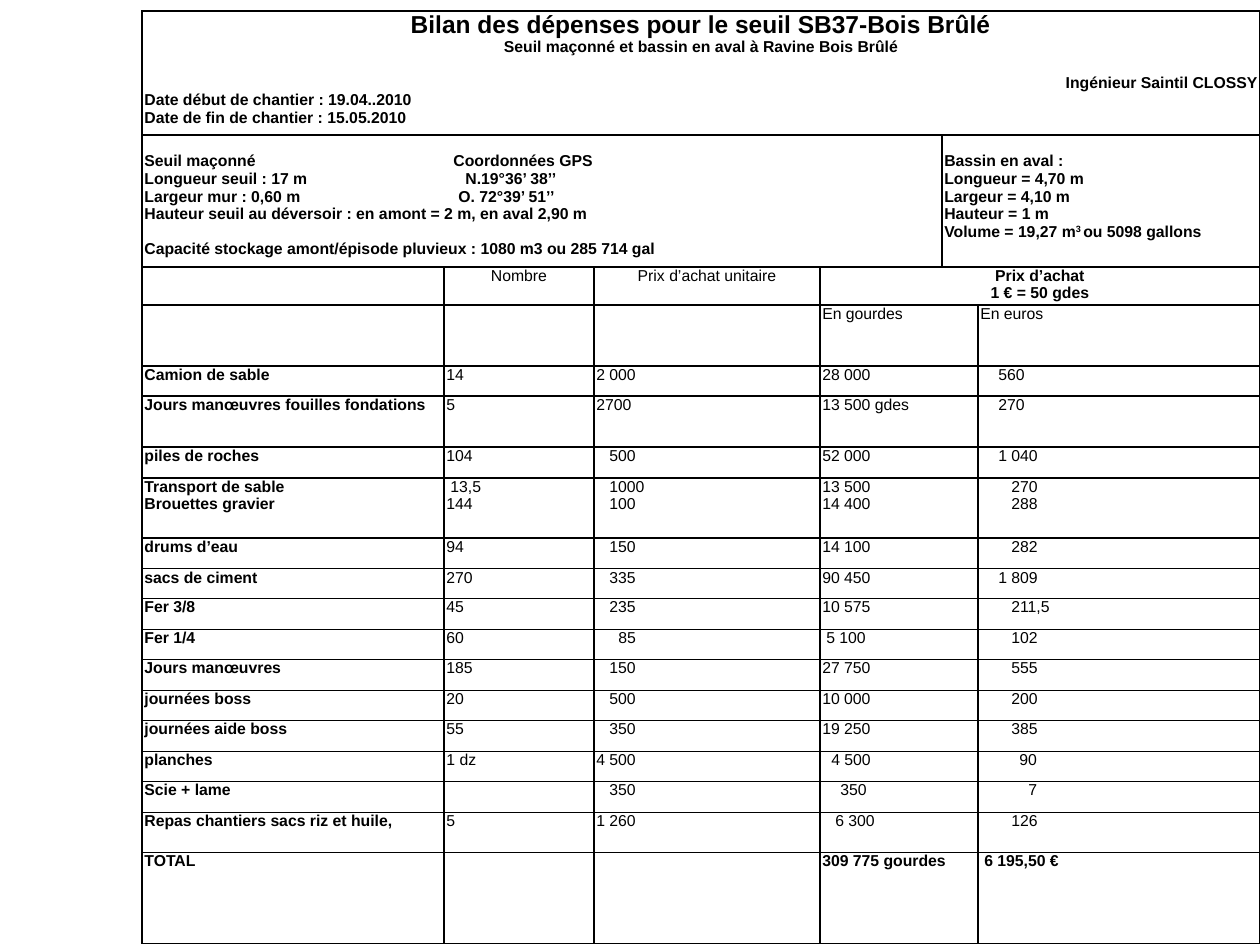
import itertools

import pptx
import pptx.dml.color
import pptx.enum.text
import pptx.oxml
import pptx.oxml.ns
import pptx.util

PX = 914400 // 126
BLACK = pptx.dml.color.RGBColor(0x00, 0x00, 0x00)
FONT = "Arial"
TEXT_SIZE = 9
LINE_GAP = 10
ALIGN = pptx.enum.text.PP_ALIGN

COLUMN_EDGES = [142, 444, 594, 820, 942, 978, 1260]
ROW_EDGES = [11, 135, 267, 305, 366, 396, 447, 478, 538, 569, 599,
             630, 660, 691, 721, 752, 782, 813, 853, 944]
FIRST_ITEM_ROW = 4
ITEM_COLUMNS = [0, 1, 2, 3, 5]

# One group per table row: name, number, unit price, gourdes, euros.
# An amount set in from the left is given as (text, indent in px).
EXPENSES = [
    [("Camion de sable", "14", "2 000", "28 000", ("560", 18))],
    [("Jours manœuvres fouilles fondations", "5", "2700", "13 500 gdes", ("270", 18))],
    [("piles de roches", "104", ("500", 13), "52 000", ("1 040", 18))],
    [("Transport de sable", ("13,5", 4), ("1000", 13), "13 500", ("270", 31)),
     ("Brouettes gravier", "144", ("100", 13), "14 400", ("288", 31))],
    [("drums d’eau", "94", ("150", 13), "14 100", ("282", 31))],
    [("sacs de ciment", "270", ("335", 13), "90 450", ("1 809", 18))],
    [("Fer 3/8", "45", ("235", 13), "10 575", ("211,5", 31))],
    [("Fer 1/4", "60", ("85", 22), ("5 100", 4), ("102", 31))],
    [("Jours manœuvres", "185", ("150", 13), "27 750", ("555", 31))],
    [("journées boss", "20", ("500", 13), "10 000", ("200", 31))],
    [("journées aide boss", "55", ("350", 13), "19 250", ("385", 31))],
    [("planches", "1 dz", "4 500", ("4 500", 9), ("90", 39))],
    [("Scie + lame", "", ("350", 13), ("350", 18), ("7", 48))],
    [("Repas chantiers sacs riz et huile,", "5", "1 260", ("6 300", 13), ("126", 31))],
    [("TOTAL", "", "", "309 775 gourdes", ("6 195,50 €", 4))],
]


def px(length):
    return pptx.util.Emu(length * PX)


def add_run(paragraph, text, bold, size=TEXT_SIZE, superscript=False):
    run = paragraph.add_run()
    run.text = text
    run.font.name = FONT
    run.font.size = pptx.util.Pt(size)
    run.font.bold = bold
    run.font.color.rgb = BLACK
    if superscript:
        run.font._element.set("baseline", "30000")


def add_line(cell, text, bold=True, size=TEXT_SIZE, align=ALIGN.LEFT,
             indent=0, gap=0, tab=None):
    """Fill the cell's first paragraph if it is free, else add another."""
    paragraph = cell.text_frame.paragraphs[0]
    if paragraph.runs:
        paragraph = cell.text_frame.add_paragraph()
    paragraph.alignment = align
    if gap:
        paragraph.space_before = pptx.util.Pt(gap)
    properties = paragraph._p.get_or_add_pPr()
    if indent:
        properties.set("marL", str(px(indent)))
    if tab:
        properties.append(pptx.oxml.parse_xml(
            f'<a:tabLst {pptx.oxml.ns.nsdecls("a")}>'
            f'<a:tab pos="{px(tab)}" algn="l"/></a:tabLst>'))
    add_run(paragraph, text, bold, size)
    return paragraph


def format_cell(cell):
    cell.margin_left = cell.margin_right = pptx.util.Inches(0.02)
    cell.margin_top = cell.margin_bottom = 0
    cell.fill.background()
    properties = cell._tc.get_or_add_tcPr()
    for position, side in enumerate("LRTB"):
        properties.insert(position, pptx.oxml.parse_xml(
            f'<a:ln{side} {pptx.oxml.ns.nsdecls("a")} w="12700">'
            f'<a:solidFill><a:srgbClr val="{BLACK}"/></a:solidFill></a:ln{side}>'))
    # An empty cell would otherwise keep a tall default line.
    cell.text_frame.paragraphs[0]._p.append(pptx.oxml.parse_xml(
        f'<a:endParaRPr {pptx.oxml.ns.nsdecls("a")} sz="{TEXT_SIZE * 100}"/>'))


def add_expense_table(slide):
    left, top = COLUMN_EDGES[0], ROW_EDGES[0]
    table = slide.shapes.add_table(
        len(ROW_EDGES) - 1, len(COLUMN_EDGES) - 1, px(left), px(top),
        px(COLUMN_EDGES[-1] - left), px(ROW_EDGES[-1] - top)).table
    table.first_row = table.horz_banding = False
    for column, (start, end) in zip(table.columns, itertools.pairwise(COLUMN_EDGES)):
        column.width = px(end - start)
    for row, (start, end) in zip(table.rows, itertools.pairwise(ROW_EDGES)):
        row.height = px(end - start)
    for cell in table.iter_cells():
        format_cell(cell)

    spans = [(0, 0, 5), (1, 0, 3), (1, 4, 5), (2, 3, 5)]
    spans += [(row, 3, 4) for row in range(3, len(table.rows))]
    for row, first, last in spans:
        table.cell(row, first).merge(table.cell(row, last))
    return table


def fill_heading(cell):
    add_line(cell, "Bilan des dépenses pour le seuil SB37-Bois Brûlé",
             size=14, align=ALIGN.CENTER)
    add_line(cell, "Seuil maçonné et bassin en aval à Ravine Bois Brûlé",
             align=ALIGN.CENTER)
    add_line(cell, "Ingénieur Saintil CLOSSY", align=ALIGN.RIGHT, gap=LINE_GAP)
    add_line(cell, "Date début de chantier : 19.04..2010")
    add_line(cell, "Date de fin de chantier : 15.05.2010")


def fill_dimensions(weir, basin):
    weir.margin_top = basin.margin_top = pptx.util.Pt(LINE_GAP)
    add_line(weir, "Seuil maçonné\tCoordonnées GPS", tab=309)
    add_line(weir, "Longueur seuil : 17 m\tN.19°36’ 38’’", tab=321)
    add_line(weir, "Largeur mur : 0,60 m\tO. 72°39’ 51’’", tab=314)
    add_line(weir, "Hauteur seuil au déversoir : en amont = 2 m, en aval 2,90 m")
    add_line(weir, "Capacité stockage amont/épisode pluvieux : 1080 m3 ou 285 714 gal",
             gap=LINE_GAP)

    for text in ("Bassin en aval :", "Longueur = 4,70 m", "Largeur = 4,10 m",
                 "Hauteur = 1 m"):
        add_line(basin, text)
    volume = add_line(basin, "Volume = 19,27 m")
    add_run(volume, "3 ", True, superscript=True)
    add_run(volume, "ou 5098 gallons", True)


def fill_column_titles(table):
    add_line(table.cell(2, 1), "Nombre", bold=False, align=ALIGN.CENTER)
    add_line(table.cell(2, 2), "Prix d’achat unitaire", bold=False, align=ALIGN.CENTER)
    for text in ("Prix d’achat", "1 € = 50 gdes"):
        add_line(table.cell(2, 3), text, align=ALIGN.CENTER)
    add_line(table.cell(3, 3), "En gourdes", bold=False)
    add_line(table.cell(3, 5), "En euros", bold=False)


def fill_expenses(table):
    for row, group in enumerate(EXPENSES, FIRST_ITEM_ROW):
        is_total = group is EXPENSES[-1]
        for entries in group:
            for column, entry in zip(ITEM_COLUMNS, entries):
                text, indent = entry if isinstance(entry, tuple) else (entry, 0)
                if text:
                    add_line(table.cell(row, column), text,
                             bold=is_total or column == 0, indent=indent)


def main():
    presentation = pptx.Presentation()
    presentation.slide_width = px(1260)
    presentation.slide_height = px(945)
    slide = presentation.slides.add_slide(presentation.slide_layouts[6])
    table = add_expense_table(slide)
    fill_heading(table.cell(0, 0))
    fill_dimensions(table.cell(1, 0), table.cell(1, 4))
    fill_column_titles(table)
    fill_expenses(table)
    presentation.save("out.pptx")


if __name__ == "__main__":
    main()
